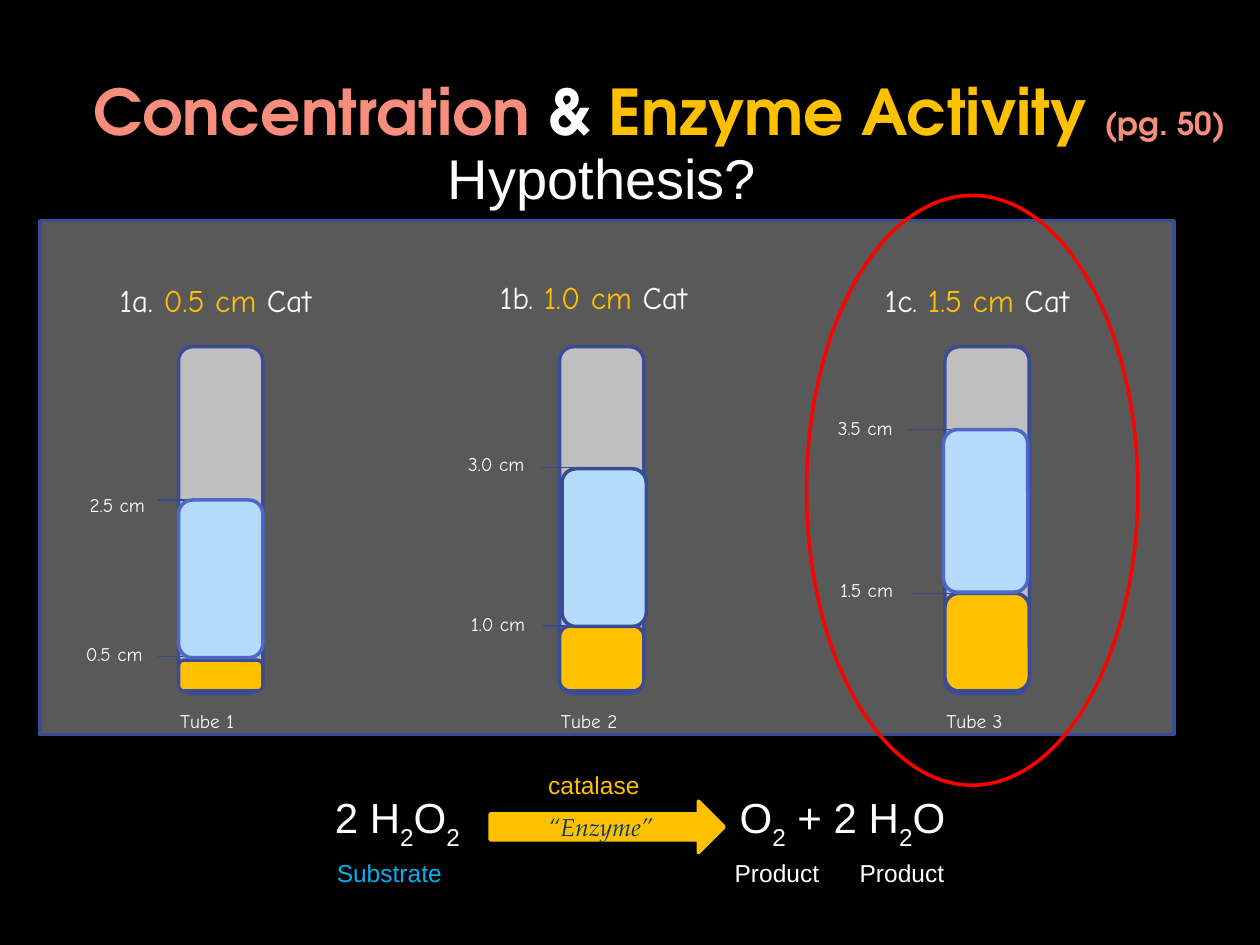
from pptx import Presentation
from pptx.dml.color import RGBColor
from pptx.enum.shapes import MSO_CONNECTOR, MSO_SHAPE
from pptx.enum.text import MSO_ANCHOR, PP_ALIGN
from pptx.util import Cm, Pt
from lxml.etree import SubElement
from pptx.oxml.ns import qn

BLACK = RGBColor(0x00, 0x00, 0x00)
WHITE = RGBColor(0xFF, 0xFF, 0xFF)
PANEL = RGBColor(0x59, 0x59, 0x59)
GLASS = RGBColor(0xBF, 0xBF, 0xBF)
LIQUID = RGBColor(0xB4, 0xDC, 0xFA)
GOLD = RGBColor(0xFF, 0xC0, 0x00)
CORAL = RGBColor(0xF7, 0x8D, 0x7C)
CYAN = RGBColor(0x00, 0xB0, 0xF0)
TEAL = RGBColor(0x07, 0x3C, 0x65)
NAVY = RGBColor(0x3A, 0x4C, 0x94)
BLUE = RGBColor(0x4E, 0x67, 0xC8)
MARK = RGBColor(0x34, 0x48, 0x96)
RED = RGBColor(0xFF, 0x00, 0x00)

prs = Presentation()
prs.slide_width, prs.slide_height = Cm(25.4), Cm(19.05)
s = prs.slides.add_slide(prs.slide_layouts[6])
s.background.fill.solid()
s.background.fill.fore_color.rgb = BLACK


def add_text(runs, x, y, w, h, size=11, font="Comic Neue", color=WHITE, bold=False,
             italic=False, align=PP_ALIGN.LEFT, anchor=MSO_ANCHOR.TOP, wrap=False, sp=None):
    if sp is None:
        sp = s.shapes.add_textbox(Cm(x), Cm(y), Cm(w), Cm(h))
    tf = sp.text_frame
    tf.word_wrap = wrap
    tf.vertical_anchor = anchor
    p = tf.paragraphs[0]
    p.alignment = align
    for text, fmt in [(runs, {})] if isinstance(runs, str) else runs:
        r = p.add_run()
        r.text = text
        r.font.name = font
        r.font.size = Pt(fmt.get("size", size))
        r.font.bold = bold
        r.font.italic = italic
        r.font.color.rgb = fmt.get("color", color)
        if "base" in fmt:
            r.font._element.set("baseline", fmt["base"])


def add_box(kind, x, y, w, h, fill, line):
    sp = s.shapes.add_shape(kind, Cm(x), Cm(y), Cm(w), Cm(h))
    sp.shadow.inherit = False
    if fill is None:
        sp.fill.background()
    else:
        sp.fill.solid()
        sp.fill.fore_color.rgb = fill
    sp.line.color.rgb = line
    sp.line.width = Pt(2)
    return sp


add_box(MSO_SHAPE.RECTANGLE, 0.81, 4.45, 22.86, 10.36, PANEL, NAVY)

tubes = [
    dict(no="1", part="1a. ", x=3.6, head=(2.16, 5.54, 6.35), align=PP_ALIGN.LEFT,
         gold=13.31, liquid=(3.6, 10.08, 3.18), edge=BLUE,
         marks=[("0.5 cm", 1.48, 12.83, 3.18, 13.23), ("2.5 cm", 1.56, 9.81, 3.18, 10.08)]),
    dict(no="2", part="1b. ", x=11.28, head=(8.74, 5.49, 6.45), align=PP_ALIGN.CENTER,
         gold=12.62, liquid=(11.33, 9.45, 3.18), edge=NAVY,
         marks=[("1.0 cm", 9.25, 12.22, 10.95, 12.62), ("3.0 cm", 9.19, 8.99, 10.9, 9.42)]),
    dict(no="3", part="1c. ", x=19.05, head=(16.43, 5.54, 6.53), align=PP_ALIGN.CENTER,
         gold=11.96, liquid=(19.02, 8.66, 3.28), edge=BLUE,
         marks=[("1.5 cm", 16.69, 11.53, 18.39, 11.96), ("3.5 cm", 16.64, 8.26, 18.31, 8.66)]),
]
for t in tubes:
    x = t["x"]
    hx, hy, hw = t["head"]
    amount = t["marks"][0][0]
    add_text([(t["part"], {}), (amount + " ", {"color": GOLD}), ("Cat", {})],
             hx, hy, hw, 1.02, size=18, align=t["align"], wrap=True)
    add_box(MSO_SHAPE.ROUNDED_RECTANGLE, x, 6.99, 1.7, 6.99, GLASS, NAVY)
    for label, lx, ly, mx, my in t["marks"]:
        add_text(label, lx, ly, 1.7, 0.74)
        c = s.shapes.add_connector(MSO_CONNECTOR.STRAIGHT, Cm(mx), Cm(my), Cm(mx + 1.27), Cm(my))
        c.line.color.rgb = MARK
        c.line.width = Pt(0.75)
        SubElement(c._element.spPr, qn("a:effectLst"))
    add_box(MSO_SHAPE.ROUNDED_RECTANGLE, x, t["gold"], 1.7, 13.93 - t["gold"], GOLD, NAVY)
    qx, qy, qh = t["liquid"]
    add_box(MSO_SHAPE.ROUNDED_RECTANGLE, qx, qy, 1.7, qh, LIQUID, t["edge"])
    add_text("Tube " + t["no"], x - 0.22, 14.17, 1.75, 0.74)

add_text([("Concentration ", {"color": CORAL}), ("& ", {}), ("Enzyme Activity ", {"color": GOLD}),
          ("(pg. 50)", {"color": CORAL, "size": 18})],
         1.63, 0.91, 23.77, 2.62, size=36, font="TeX Gyre Adventor", bold=True,
         anchor=MSO_ANCHOR.MIDDLE, wrap=True)
add_text("Hypothesis?", 8.78, 2.77, 6.78, 1.63, size=32, font="Arial")

sub = {"base": "-30000"}
add_text([("2 H", {}), ("2", sub), ("O", {}), ("2", sub)],
         6.5, 15.93, 3.3, 1.27, size=24, font="Arial", anchor=MSO_ANCHOR.MIDDLE)
add_text([("O", {}), ("2", sub), (" + 2 H", {}), ("2", sub), ("O", {})],
         14.66, 15.93, 5, 1.27, size=24, font="Arial", anchor=MSO_ANCHOR.MIDDLE)
for label, x, y, w, color in [("catalase", 10.8, 15.4, 3, GOLD),
                              ("Substrate", 6.54, 17.18, 3.5, CYAN),
                              ("Product", 14.56, 17.18, 2.5, WHITE),
                              ("Product", 17.08, 17.18, 2.5, WHITE)]:
    add_text(label, x, y, w, 0.82, size=14, font="Arial", color=color)

arrow = add_box(MSO_SHAPE.RIGHT_ARROW, 9.88, 16.15, 4.72, 1.04, GOLD, GOLD)
add_text("“Enzyme”", 0, 0, 0, 0, size=14, font="TeX Gyre Pagella", color=TEAL, italic=True,
         align=PP_ALIGN.CENTER, anchor=MSO_ANCHOR.MIDDLE, wrap=True, sp=arrow)
add_box(MSO_SHAPE.OVAL, 16.26, 3.94, 6.68, 11.89, None, RED)

prs.save("out.pptx")
